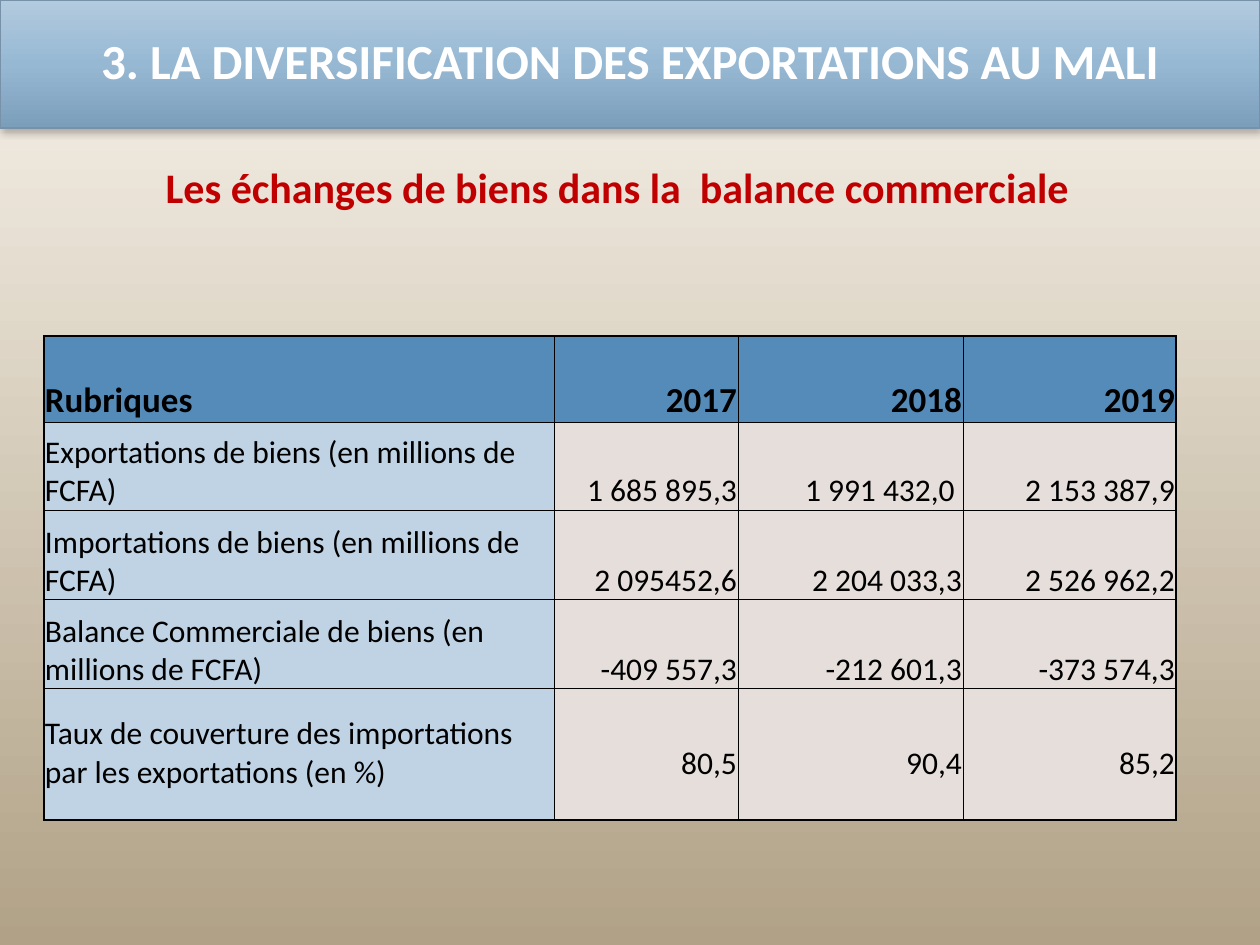
from copy import deepcopy
from dataclasses import dataclass

from lxml.etree import SubElement
from pptx import Presentation
from pptx.dml.color import RGBColor
from pptx.enum.text import MSO_ANCHOR, PP_ALIGN
from pptx.oxml.ns import qn
from pptx.util import Emu, Pt

SCALE = 914400 / 126
FONT = "Calibri"
BLACK = "000000"
NO_STYLE = "{2D5ABB26-0587-4C30-8999-92F81FD0307C}"


@dataclass
class Entry:
    label: str
    values: tuple[str, ...]
    height: int
    label_fill: str = "BFD3E4"
    value_fill: str = "E6DEDB"
    size: int = 18
    bold: bool = False
    label_lift: int = 0
    value_lift: int = 0


ENTRIES = [
    Entry("Rubriques", ("2017", "2018", "2019"), 86, "558BB8", "558BB8", 20, True),
    Entry("Exportations de biens (en millions de FCFA)",
          ("1 685 895,3", "1 991 432,0 ", "2 153 387,9"), 88),
    Entry("Importations de biens (en millions de FCFA)",
          ("2 095452,6", "2 204 033,3", "2 526 962,2"), 90),
    Entry("Balance Commerciale de biens (en millions de FCFA)",
          ("-409 557,3", "-212 601,3", "-373 574,3"), 89),
    Entry("Taux de couverture des importations par les exportations (en %)",
          ("80,5", "90,4", "85,2"), 131, label_lift=28, value_lift=37),
]
COLUMN_WIDTHS = [510, 184, 225, 213, 59]
SPACER_HEIGHTS = [145, 26]


def px(length: int) -> Emu:
    return Emu(round(length * SCALE))


def rgb(value: str) -> RGBColor:
    return RGBColor.from_string(value)


def place(shape, left: int, top: int, width: int, height: int) -> None:
    shape.left, shape.top = px(left), px(top)
    shape.width, shape.height = px(width), px(height)


def write(frame, text: str, size: int, color: str, bold: bool, align: PP_ALIGN) -> None:
    frame.text = text
    frame.word_wrap = True
    paragraph = frame.paragraphs[0]
    paragraph.alignment = align
    for run in paragraph.runs:
        run.font.name = FONT
        run.font.size = Pt(size)
        run.font.bold = bold
        run.font.color.rgb = rgb(color)


def paint_gradient(fill, owner, colors: list[str]) -> None:
    fill.gradient()
    fill.gradient_angle = 270
    stop_list = owner.find(".//" + qn("a:gsLst"))
    while len(stop_list) < len(colors):
        stop_list.append(deepcopy(stop_list[0]))
    for index, (stop, color) in enumerate(zip(fill.gradient_stops, colors)):
        stop.color.rgb = rgb(color)
        stop.position = index / (len(colors) - 1)


def add_shadow(shape) -> None:
    shape.shadow.inherit = False
    effects = shape.element.spPr.find(qn("a:effectLst"))
    shadow = SubElement(effects, qn("a:outerShdw"), blurRad=str(Pt(4)), dist=str(Pt(2)),
                        dir="5400000", rotWithShape="0")
    tint = SubElement(shadow, qn("a:srgbClr"), val=BLACK)
    SubElement(tint, qn("a:alpha"), val="28000")


def add_borders(cell, widths: dict[str, float]) -> None:
    properties = cell._tc.get_or_add_tcPr()
    for side, width in widths.items():
        line = SubElement(properties, qn(f"a:ln{side}"), w=str(Pt(width)))
        SubElement(SubElement(line, qn("a:solidFill")), qn("a:srgbClr"), val=BLACK)


def clear_cell(cell) -> None:
    cell.margin_top = cell.margin_bottom = 0
    cell.fill.background()
    paragraph = cell.text_frame.paragraphs[0]
    SubElement(paragraph._p, qn("a:endParaRPr"), sz="800")


def add_title(slide) -> None:
    title = slide.shapes.title
    place(title, 0, 0, 1260, 128)
    paint_gradient(title.fill, title.element.spPr, ["B2CADE", "97B8D3", "7B9EBB"])
    title.line.color.rgb = rgb("7792A8")
    title.line.width = Pt(0.75)
    add_shadow(title)
    write(title.text_frame, "3. LA DIVERSIFICATION DES EXPORTATIONS AU MALI",
          28, "FFFFFF", True, PP_ALIGN.CENTER)
    title.text_frame.vertical_anchor = MSO_ANCHOR.MIDDLE
    title.text_frame.paragraphs[0].line_spacing = 0.9


def add_subtitle(slide) -> None:
    subtitle = slide.shapes.add_textbox(px(-5), px(145), px(1245), px(780))
    write(subtitle.text_frame, "Les échanges de biens dans la  balance commerciale",
          24, "C00000", True, PP_ALIGN.CENTER)
    subtitle.text_frame.paragraphs[0].line_spacing = 1.2


def fill_row(table, row: int, entry: Entry) -> None:
    texts = (entry.label, *entry.values)
    first, last = len(SPACER_HEIGHTS), len(table.rows) - 1
    for column, text in enumerate(texts):
        cell = table.cell(row, column)
        is_label = column == 0
        add_borders(cell, {
            "L": 1 if is_label else 0.5,
            "R": 1 if column == len(texts) - 1 else 0.5,
            "T": 1 if row == first else 0.5,
            "B": 1 if row == last else 0.5,
        })
        cell.fill.solid()
        cell.fill.fore_color.rgb = rgb(entry.label_fill if is_label else entry.value_fill)
        cell.margin_left = cell.margin_right = cell.margin_top = px(1)
        cell.margin_bottom = px(entry.label_lift if is_label else entry.value_lift)
        cell.vertical_anchor = MSO_ANCHOR.BOTTOM
        write(cell.text_frame, text, entry.size, BLACK, entry.bold,
              PP_ALIGN.LEFT if is_label else PP_ALIGN.RIGHT)
    clear_cell(table.cell(row, len(texts)))


def add_trade_table(slide) -> None:
    heights = SPACER_HEIGHTS + [entry.height for entry in ENTRIES]
    frame = slide.shapes.add_table(len(heights), len(COLUMN_WIDTHS), px(44), px(165),
                                   px(sum(COLUMN_WIDTHS)), px(sum(heights)))
    table = frame.table
    table.first_row = table.horz_banding = False
    table._tbl.tblPr.find(qn("a:tableStyleId")).text = NO_STYLE
    for column, width in zip(table.columns, COLUMN_WIDTHS):
        column.width = px(width)
    for row, height in zip(table.rows, heights):
        row.height = px(height)
    for row in range(len(SPACER_HEIGHTS)):
        for column in range(len(COLUMN_WIDTHS)):
            clear_cell(table.cell(row, column))
    table.cell(0, 0).merge(table.cell(0, len(COLUMN_WIDTHS) - 1))
    for row, entry in enumerate(ENTRIES, len(SPACER_HEIGHTS)):
        fill_row(table, row, entry)


def main() -> None:
    presentation = Presentation()
    presentation.slide_width, presentation.slide_height = px(1260), px(945)
    slide = presentation.slides.add_slide(presentation.slide_layouts[5])
    paint_gradient(slide.background.fill, slide.element.cSld.bg, ["F8F3EB", "B1A287"])
    add_title(slide)
    add_subtitle(slide)
    add_trade_table(slide)
    presentation.save("out.pptx")


if __name__ == "__main__":
    main()
